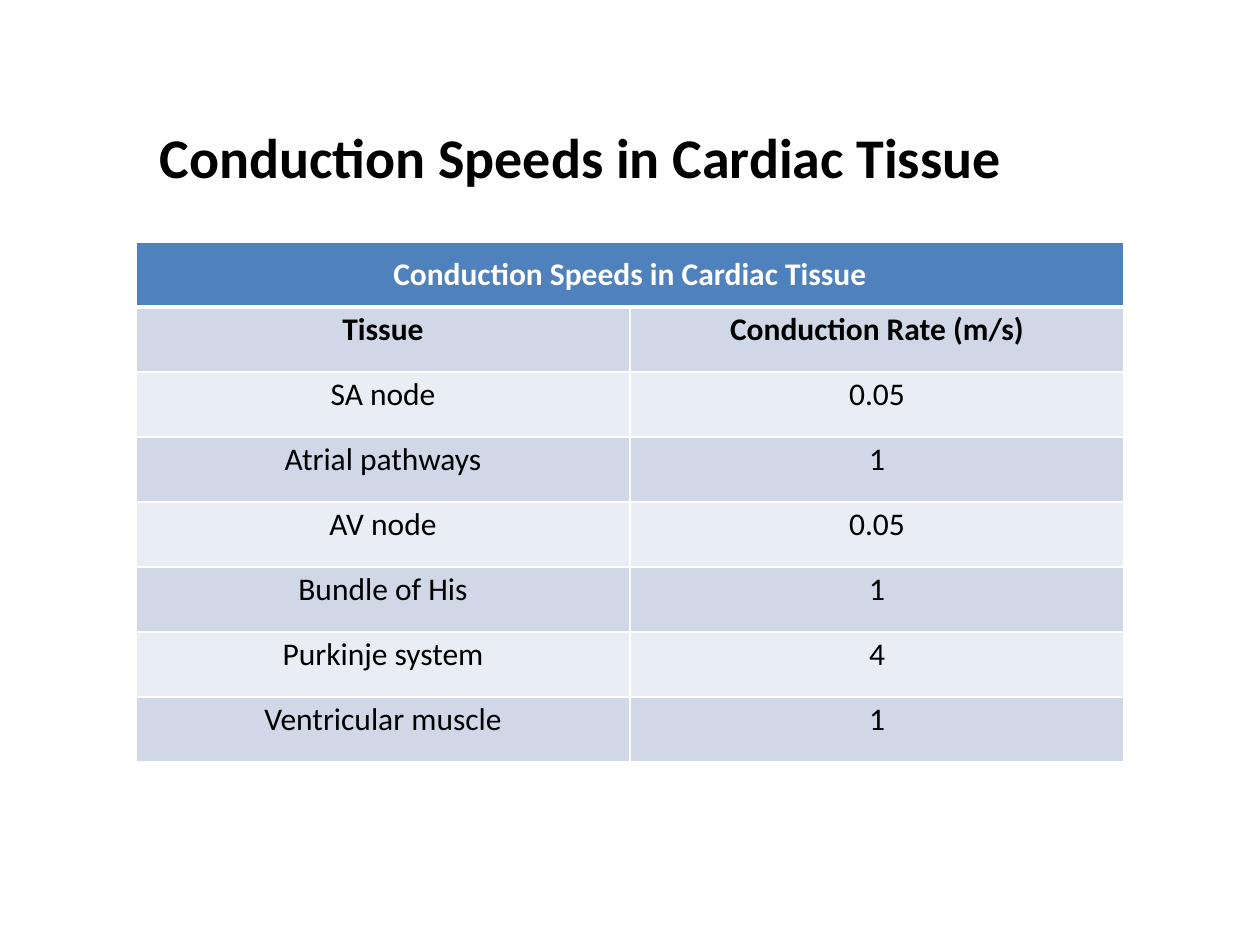
import pptx
import pptx.dml.color
import pptx.enum.text
import pptx.oxml
import pptx.oxml.ns
import pptx.util

EMU_PER_PX = 914400 / 126
HEADING = "Conduction Speeds in Cardiac Tissue"
SPEEDS = [
    ("Tissue", "Conduction Rate (m/s)"),
    ("SA node", "0.05"),
    ("Atrial pathways", "1"),
    ("AV node", "0.05"),
    ("Bundle of His", "1"),
    ("Purkinje system", "4"),
    ("Ventricular muscle", "1"),
]


def px(length):
    return pptx.util.Emu(round(length * EMU_PER_PX))


def color(hex_string):
    return pptx.dml.color.RGBColor.from_string(hex_string)


def write(frame, text, *, font, size, ink="000000", bold=False, align="LEFT"):
    paragraph = frame.paragraphs[0]
    paragraph.alignment = getattr(pptx.enum.text.PP_ALIGN, align)
    run = paragraph.add_run()
    run.text = text
    run.font.name = font
    run.font.size = pptx.util.Pt(size)
    run.font.bold = bold
    run.font.color.rgb = color(ink)


def set_borders(cell, hex_string, **widths):
    """Draw cell edges; widths maps L, R, T, B to points."""
    properties = cell._tc.get_or_add_tcPr()
    for position, (edge, points) in enumerate(widths.items()):
        line = pptx.oxml.parse_xml(
            f'<a:ln{edge} {pptx.oxml.ns.nsdecls("a")} w="{pptx.util.Pt(points)}">'
            f'<a:solidFill><a:srgbClr val="{hex_string}"/></a:solidFill></a:ln{edge}>'
        )
        properties.insert(position, line)


class SpeedSlide:
    font = "Calibri"
    white = "FFFFFF"
    header_fill = "4F81BD"
    band_fills = ("D0D8E8", "E9EDF4")

    def __init__(self, presentation):
        self.slide = presentation.slides.add_slide(presentation.slide_layouts[6])

    def title(self, text, left, top, width, height):
        box = self.slide.shapes.add_textbox(px(left), px(top), px(width), px(height))
        box.text_frame.word_wrap = False
        box.text_frame.auto_size = pptx.enum.text.MSO_AUTO_SIZE.SHAPE_TO_FIT_TEXT
        write(box.text_frame, text, font=self.font, size=32, bold=True)

    def cell(self, cell, fill, inset, bottom=1, top=1):
        cell.fill.solid()
        cell.fill.fore_color.rgb = color(fill)
        cell.margin_left = cell.margin_right = px(inset)
        cell.margin_top = cell.margin_bottom = px(inset)
        set_borders(cell, self.white, L=1, R=1, T=top, B=bottom)

    def table(self, heading, rows, left, top, column_width, row_height):
        columns = len(rows[0])
        count = len(rows) + 1
        table = self.slide.shapes.add_table(
            count, columns, px(left), px(top),
            px(columns * column_width), px(count * row_height),
        ).table
        for column in table.columns:
            column.width = px(column_width)
        for row in table.rows:
            row.height = px(row_height)

        header = table.cell(0, 0)
        header.merge(table.cell(0, columns - 1))
        for index in range(columns):
            self.cell(table.cell(0, index), self.header_fill, 0, bottom=3)
        header.vertical_anchor = pptx.enum.text.MSO_ANCHOR.MIDDLE
        write(header.text_frame, heading, font=self.font, size=18,
              ink=self.white, bold=True, align="CENTER")

        for row_index, row in enumerate(rows):
            for column_index, text in enumerate(row):
                cell = table.cell(row_index + 1, column_index)
                self.cell(cell, self.band_fills[row_index % 2], 4,
                          top=3 if row_index == 0 else 1)
                write(cell.text_frame, text, font=self.font, size=18,
                      bold=row_index == 0, align="CENTER")


def main():
    presentation = pptx.Presentation()
    presentation.slide_width = px(1260)
    presentation.slide_height = px(945)
    page = SpeedSlide(presentation)
    page.table(HEADING, SPEEDS, left=136, top=242, column_width=494, row_height=65)
    page.title(HEADING, left=147, top=116, width=876, height=81)
    presentation.save("out.pptx")


if __name__ == "__main__":
    main()
